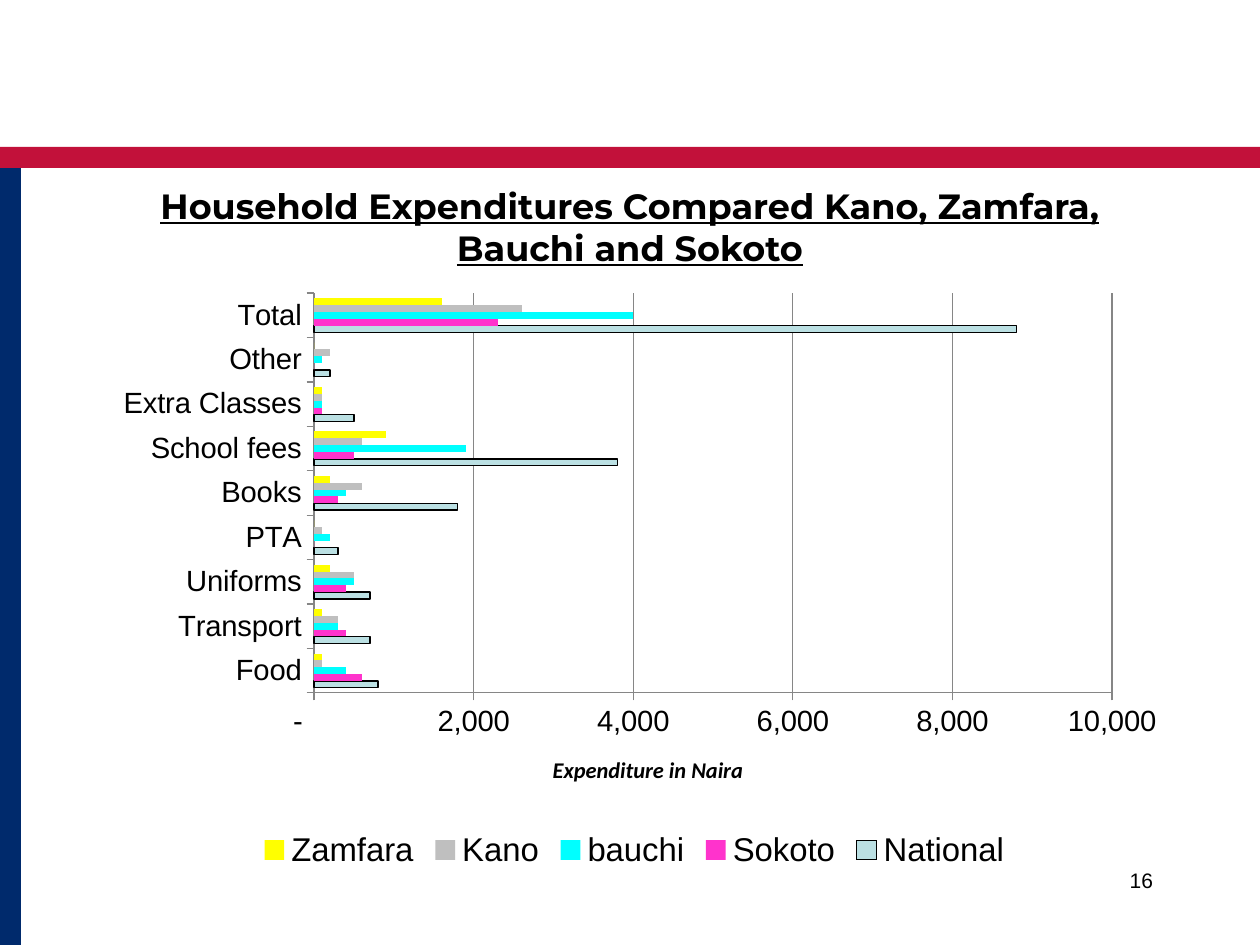
from dataclasses import dataclass

from lxml import etree
from pptx import Presentation
from pptx import util as u
from pptx.chart.data import CategoryChartData
from pptx.dml.color import RGBColor
from pptx.enum import chart as charts, shapes, text
from pptx.oxml.ns import qn

Pt = u.Pt


@dataclass(frozen=True)
class Theme:
    red: str = "C2113A"
    navy: str = "002A6C"
    ink: str = "000000"
    grid: str = "868686"
    title_font: str = "Montserrat"
    body_font: str = "Arial"
    caption_font: str = "Calibri"
    title_size: float = 20
    legend_size: float = 18.8
    axis_size: float = 16.7
    caption_size: float = 12.8
    number_size: float = 12


THEME = Theme()

CATEGORIES = ["Food", "Transport", "Uniforms", "PTA", "Books",
              "School fees", "Extra Classes", "Other", "Total"]
# Region: (bar colour, expenditure in each category)
REGIONS = {
    "National": ("BBE0E3", [800, 700, 700, 300, 1800, 3800, 500, 200, 8800]),
    "Sokoto": ("FF33CC", [600, 400, 400, 0, 300, 500, 100, 0, 2300]),
    "bauchi": ("00FFFF", [400, 300, 500, 200, 400, 1900, 100, 100, 4000]),
    "Kano": ("BFBFBF", [100, 300, 500, 100, 600, 600, 100, 200, 2600]),
    "Zamfara": ("FFFF00", [100, 100, 200, 0, 200, 900, 100, 0, 1600]),
}


def style_font(font, name, size, bold=False):
    font.name, font.size, font.bold = name, Pt(size), bold
    font.color.rgb = RGBColor.from_string(THEME.ink)


def add_band(slide, box, color):
    band = slide.shapes.add_shape(shapes.MSO_SHAPE.RECTANGLE, *map(Pt, box))
    band.shadow.inherit = False
    band.fill.solid()
    band.fill.fore_color.rgb = RGBColor.from_string(color)
    band.line.fill.background()


def add_frame(slide, box):
    """Red band across the top, navy band down the left side."""
    left, top, width, height = box
    thickness = 12
    add_band(slide, (left, top, width, thickness), THEME.red)
    add_band(slide, (left, top + thickness, thickness, height - thickness), THEME.navy)


def add_title(slide, box, wording):
    title = slide.shapes.title
    title.left, title.top, title.width, title.height = map(Pt, box)
    frame = title.text_frame
    frame.text = wording
    frame.word_wrap = True
    frame.auto_size = text.MSO_AUTO_SIZE.NONE
    frame.vertical_anchor = text.MSO_ANCHOR.TOP
    paragraph = frame.paragraphs[0]
    paragraph.alignment = text.PP_ALIGN.CENTER
    font = paragraph.runs[0].font
    style_font(font, THEME.title_font, THEME.title_size, bold=True)
    font.underline = True


def set_layout(element, **values):
    """Place a chart part by fractions of the chart area."""
    layout = element.find(qn("c:layout"))
    if layout is None:
        layout = etree.Element(qn("c:layout"))
        texts = element.find(qn("c:tx"))
        if texts is None:
            element.insert(0, layout)
        else:
            texts.addnext(layout)
    for child in list(layout):
        layout.remove(child)
    manual = etree.SubElement(layout, qn("c:manualLayout"))
    for name, value in values.items():
        etree.SubElement(manual, qn("c:" + name), val=str(value))


def style_axis(axis):
    axis.major_tick_mark = charts.XL_TICK_MARK.OUTSIDE
    axis.minor_tick_mark = charts.XL_TICK_MARK.NONE
    axis.format.line.color.rgb = RGBColor.from_string(THEME.grid)
    style_font(axis.tick_labels.font, THEME.body_font, THEME.axis_size)


def add_expenditure_chart(slide, box):
    data = CategoryChartData()
    data.categories = CATEGORIES
    for name, (_, values) in REGIONS.items():
        data.add_series(name, values)
    chart = slide.shapes.add_chart(
        charts.XL_CHART_TYPE.BAR_CLUSTERED, *map(Pt, box), data).chart
    chart.has_title = False
    style_font(chart.font, THEME.body_font, THEME.legend_size)

    # Bars
    plot = chart.plots[0]
    plot.gap_width = 150
    plot.overlap = 0
    plot.vary_by_categories = False
    for series in plot.series:
        series.format.fill.solid()
        series.format.fill.fore_color.rgb = RGBColor.from_string(REGIONS[series.name][0])
        if series.name == "National":
            series.format.line.color.rgb = RGBColor.from_string(THEME.ink)
            series.format.line.width = Pt(0.78)
        else:
            series.format.line.fill.background()

    # Axes
    style_axis(chart.category_axis)
    value_axis = chart.value_axis
    style_axis(value_axis)
    value_axis.minimum_scale, value_axis.maximum_scale = 0, 10000
    value_axis.major_unit = 2000
    value_axis.has_major_gridlines = True
    value_axis.major_gridlines.format.line.color.rgb = RGBColor.from_string(THEME.grid)
    value_axis.tick_labels.number_format = r'_(* #,##0_);_(* \(#,##0\);_(* "-"??_);_('
    value_axis.tick_labels.number_format_is_linked = False
    frame = value_axis.axis_title.text_frame
    frame.text = "Expenditure in Naira"
    font = frame.paragraphs[0].runs[0].font
    style_font(font, THEME.caption_font, THEME.caption_size, bold=True)
    font.italic = True

    # Legend
    chart.has_legend = True
    chart.legend.position = charts.XL_LEGEND_POSITION.BOTTOM
    chart.legend.include_in_layout = False
    style_font(chart.legend.font, THEME.body_font, THEME.legend_size)

    # Plot area and axis title, in points turned into fractions
    _, _, width, height = box
    plot_area = chart.element.find(".//" + qn("c:plotArea"))
    set_layout(plot_area, layoutTarget="inner", xMode="edge", yMode="edge",
               x=139.5 / width, y=13.5 / height, w=456 / width, h=228.5 / height)
    set_layout(value_axis.axis_title._element, xMode="edge", yMode="edge",
               x=273.5 / width, y=275 / height)


def add_page_number(slide, box, number):
    frame = slide.shapes.add_textbox(*map(Pt, box)).text_frame
    frame.word_wrap = True
    frame.text = str(number)
    paragraph = frame.paragraphs[0]
    paragraph.alignment = text.PP_ALIGN.RIGHT
    style_font(paragraph.runs[0].font, THEME.body_font, THEME.number_size)


def main():
    presentation = Presentation()
    presentation.slide_width, presentation.slide_height = Pt(720), Pt(540)
    slide = presentation.slides.add_slide(presentation.slide_layouts[5])
    add_frame(slide, (0, 84, 720, 456))
    add_title(slide, (54, 102, 612, 48),
              "Household Expenditures Compared Kano, Zamfara, Bauchi and Sokoto")
    add_expenditure_chart(slide, (40, 154, 645, 346))
    add_page_number(slide, (516, 492, 150, 36), 16)
    presentation.save("out.pptx")


if __name__ == "__main__":
    main()
